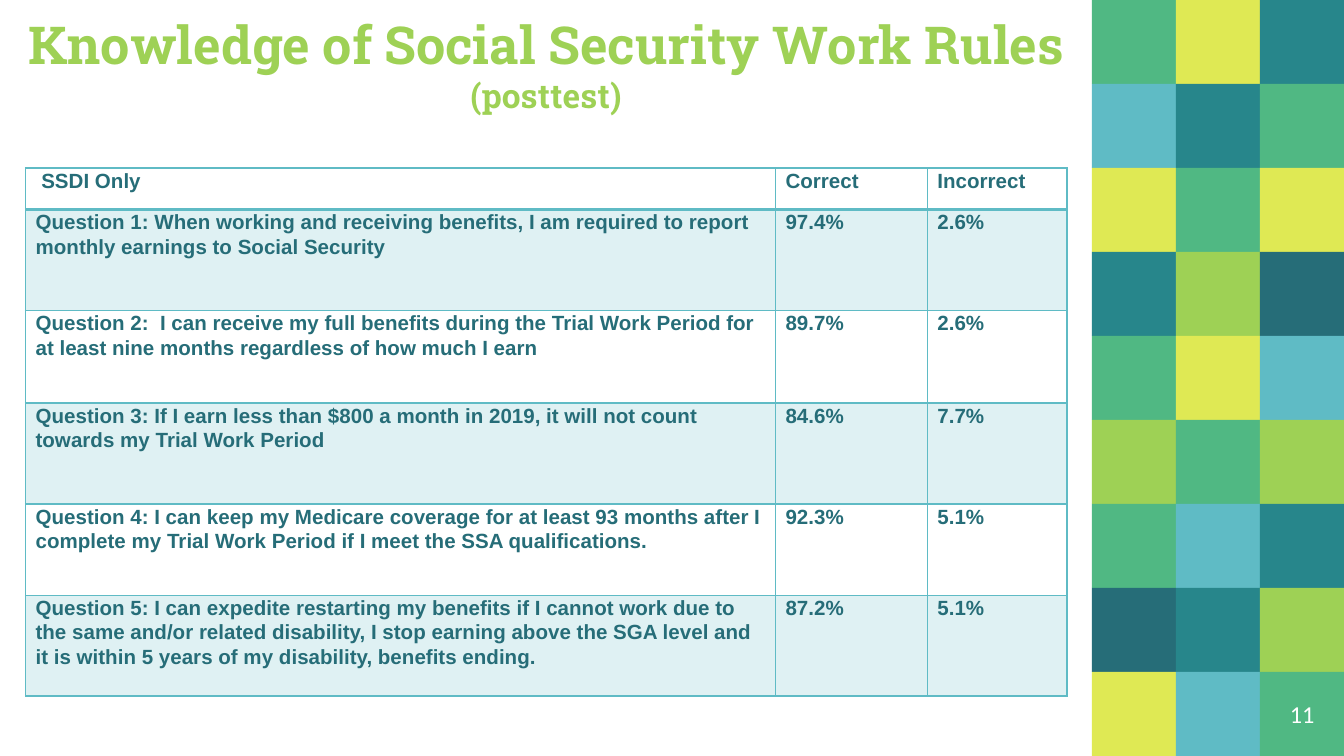
"""Build the slide on posttest knowledge of Social Security work rules."""
from lxml import etree
from pptx import Presentation
from pptx import util as u
from pptx.dml.color import RGBColor
from pptx.enum import shapes, text
from pptx.oxml.ns import qn

WIDTH = 10
HEIGHT = WIDTH * 9 / 16
LIME, NAVY, YELLOW = "9ED155", "266D78", "DFE954"
GREEN, TEAL, SKY, WHITE = "50B883", "27868B", "5FBBC5", "FFFFFF"

TITLE = [("Knowledge of Social Security Work Rules", 28), ("(posttest)", 18)]
PAGE = "11"
RESULTS = [
    (" SSDI Only", "Correct", "Incorrect"),
    ("Question 1: When working and receiving benefits, I am required to report "
     "monthly earnings to Social Security", "97.4%", "2.6%"),
    ("Question 2:  I can receive my full benefits during the Trial Work Period for "
     "at least nine months regardless of how much I earn", "89.7%", "2.6%"),
    ("Question 3: If I earn less than $800 a month in 2019, it will not count "
     "towards my Trial Work Period", "84.6%", "7.7%"),
    ("Question 4: I can keep my Medicare coverage for at least 93 months after I "
     "complete my Trial Work Period if I meet the SSA qualifications.", "92.3%", "5.1%"),
    ("Question 5: I can expedite restarting my benefits if I cannot work due to "
     "the same and/or related disability, I stop earning above the SGA level and "
     "it is within 5 years of my disability, benefits ending.", "87.2%", "5.1%"),
]
COLUMN_WIDTHS = [5.58, 1.13, 1.04]
ROW_HEIGHTS = [0.31, 0.75, 0.69, 0.75, 0.68, 0.75]
MOSAIC = [
    (GREEN, YELLOW, TEAL),
    (SKY, TEAL, GREEN),
    (YELLOW, GREEN, YELLOW),
    (TEAL, LIME, NAVY),
    (GREEN, YELLOW, SKY),
    (LIME, GREEN, LIME),
    (GREEN, SKY, TEAL),
    (NAVY, TEAL, LIME),
    (YELLOW, SKY, GREEN),
]
TILE = HEIGHT / len(MOSAIC)
MOSAIC_LEFT = WIDTH - 3 * TILE


def color(value):
    return RGBColor.from_string(value)


def box(left, top, width, height):
    return [u.Inches(n) for n in (left, top, width, height)]


def add_run(paragraph, words, font, size, shade, bold=False):
    run = paragraph.add_run()
    run.text = words
    run.font.name, run.font.size, run.font.bold = font, u.Pt(size), bold
    run.font.color.rgb = color(shade)


def add_label(slide, place, anchor):
    frame = slide.shapes.add_textbox(*box(*place)).text_frame
    frame.word_wrap = True
    frame.vertical_anchor = anchor
    frame.margin_left = frame.margin_right = u.Inches(0.1)
    frame.margin_top = frame.margin_bottom = u.Inches(0.1)
    paragraph = frame.paragraphs[0]
    paragraph.alignment = text.PP_ALIGN.CENTER
    return paragraph


def add_borders(cell, top, bottom):
    properties = cell._tc.get_or_add_tcPr()
    for side, points in (("L", 1), ("R", 1), ("T", top), ("B", bottom)):
        line = etree.SubElement(properties, qn(f"a:ln{side}"), w=str(u.Pt(points)))
        fill = etree.SubElement(line, qn("a:solidFill"))
        etree.SubElement(fill, qn("a:srgbClr"), val=SKY)


def fill_cell(cell, banded):
    if not banded:
        cell.fill.background()
        return
    cell.fill.solid()
    cell.fill.fore_color.rgb = color(SKY)
    shade = cell._tc.tcPr.find(qn("a:solidFill")).find(qn("a:srgbClr"))
    etree.SubElement(shade, qn("a:alpha"), val="20000")


def add_mosaic(slide):
    for row, shades in enumerate(MOSAIC):
        for column, shade in enumerate(shades):
            place = box(MOSAIC_LEFT + column * TILE, row * TILE, TILE, TILE)
            tile = slide.shapes.add_shape(shapes.MSO_SHAPE.RECTANGLE, *place)
            tile.shadow.inherit = False
            tile.fill.solid()
            tile.fill.fore_color.rgb = color(shade)
            tile.line.fill.background()


def add_results(slide):
    place = box(0.19, 1.25, sum(COLUMN_WIDTHS), sum(ROW_HEIGHTS))
    table = slide.shapes.add_table(len(RESULTS), len(COLUMN_WIDTHS), *place).table
    for column, width in zip(table.columns, COLUMN_WIDTHS):
        column.width = u.Inches(width)
    for index, (row, height, entries) in enumerate(zip(table.rows, ROW_HEIGHTS, RESULTS)):
        row.height = u.Inches(height)
        for cell, words in zip(row.cells, entries):
            cell.margin_left = cell.margin_right = u.Pt(5.4)
            cell.margin_top = cell.margin_bottom = 0
            add_borders(cell, 2 if index == 1 else 1, 2 if index == 0 else 1)
            fill_cell(cell, index % 2 == 1)
            paragraph = cell.text_frame.paragraphs[0]
            paragraph.line_spacing = 1.07
            add_run(paragraph, words, "Arial", 11, NAVY, True)


def main():
    deck = Presentation()
    deck.slide_width, deck.slide_height = u.Inches(WIDTH), u.Inches(HEIGHT)
    slide = deck.slides.add_slide(deck.slide_layouts[6])
    add_mosaic(slide)

    heading = add_label(slide, (0, 0.22, MOSAIC_LEFT, 0.74), text.MSO_ANCHOR.BOTTOM)
    for index, (words, size) in enumerate(TITLE):
        if index:
            heading.add_line_break()
        add_run(heading, words, "Roboto Slab", size, LIME, True)

    corner = (WIDTH - TILE, HEIGHT - TILE, TILE, TILE)
    number = add_label(slide, corner, text.MSO_ANCHOR.MIDDLE)
    add_run(number, PAGE, "Calibri", 13, WHITE)
    add_results(slide)
    deck.save("out.pptx")


if __name__ == "__main__":
    main()
